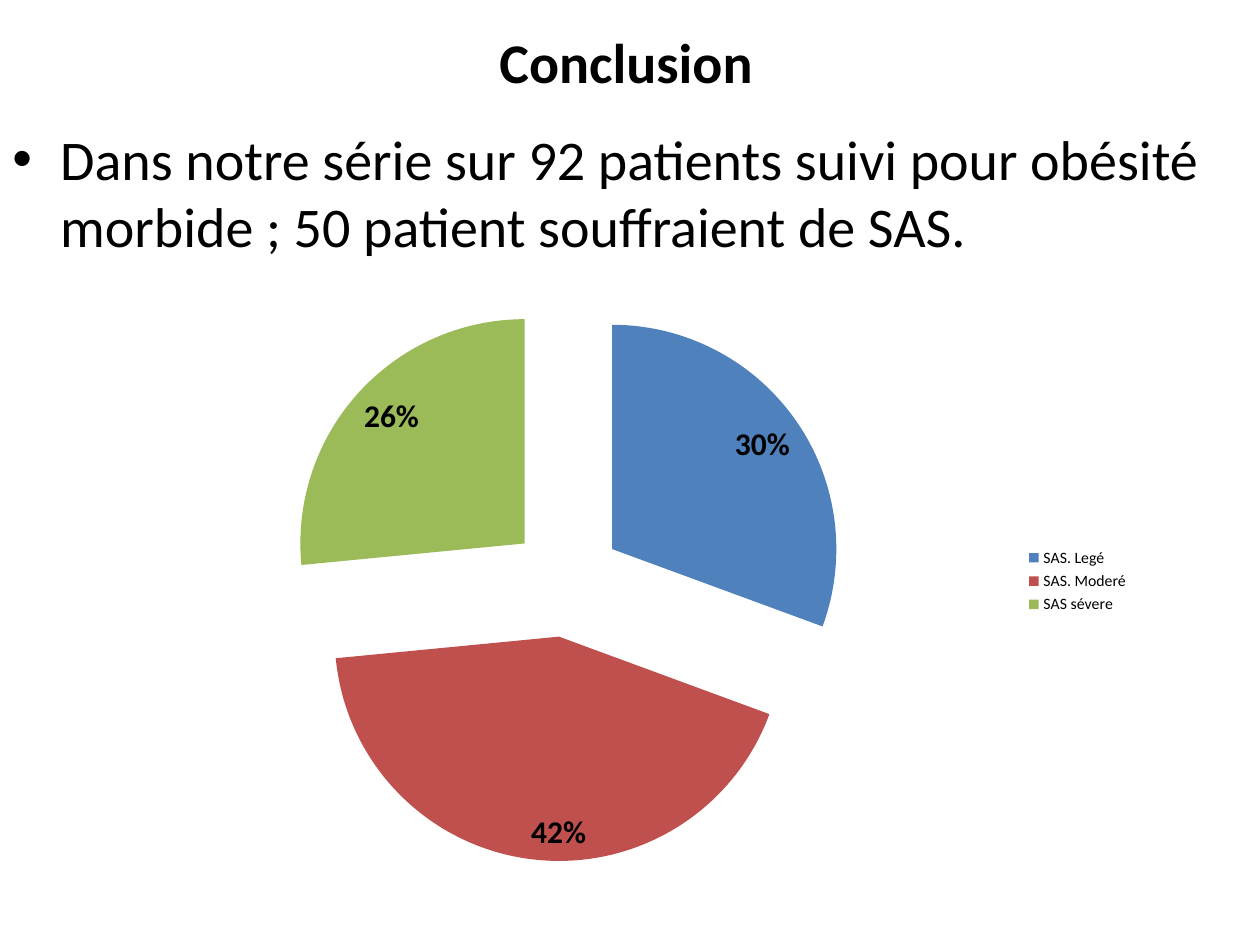
from typing import NamedTuple

from lxml import etree
from pptx import Presentation
from pptx.chart.data import CategoryChartData
from pptx.dml.color import RGBColor
from pptx.enum.chart import XL_CHART_TYPE, XL_LABEL_POSITION, XL_LEGEND_POSITION
from pptx.enum.text import MSO_ANCHOR, PP_ALIGN
from pptx.oxml.ns import qn
from pptx.util import Inches, Pt

PIE = XL_CHART_TYPE.PIE
INSIDE = XL_LABEL_POSITION.INSIDE_END
RIGHT = XL_LEGEND_POSITION.RIGHT
MIDDLE, TOP = MSO_ANCHOR.MIDDLE, MSO_ANCHOR.TOP
CENTER, LEFT = PP_ALIGN.CENTER, PP_ALIGN.LEFT

WIDE, HIGH = Inches(10), Inches(7.5)
FACE = "Calibri"
HEX = {"ink": "000000", "blue": "4F81BD", "red": "C0504D", "green": "9BBB59"}


class Box(NamedTuple):
    left: float
    top: float
    width: float
    height: float

    def place(self) -> list[int]:
        return [round(share * side) for share, side in zip(self, (WIDE, HIGH) * 2)]


class Slice(NamedTuple):
    name: str
    share: float
    hue: str


SLICES = [
    Slice("SAS. Legé", 0.30, "blue"),
    Slice("SAS. Moderé", 0.42, "red"),
    Slice("SAS sévere", 0.26, "green"),
]


def color(key: str) -> RGBColor:
    return RGBColor.from_string(HEX[key])


def style(font, size: float, bold: bool = False) -> None:
    font.name, font.size, font.bold = FACE, Pt(size), bold
    font.color.rgb = color("ink")


def write(shape, text: str, align, anchor, bold: bool = False):
    frame = shape.text_frame
    frame.text = text
    frame.word_wrap = True
    frame.vertical_anchor = anchor
    line = frame.paragraphs[0]
    line.alignment = align
    style(line.runs[0].font, 32, bold)
    return line


def bullet(line) -> None:
    props = line._p.get_or_add_pPr()
    props.set("marL", str(Inches(0.38)))
    props.set("indent", str(Inches(-0.38)))
    etree.SubElement(props, qn("a:buFont"), typeface="Arial")
    etree.SubElement(props, qn("a:buChar"), char="•")


def draw_pie(slide, box: Box, slices: list[Slice]) -> None:
    data = CategoryChartData(number_format="0%")
    data.categories = [part.name for part in slices]
    data.add_series("Series 1", [part.share for part in slices])
    chart = slide.shapes.add_chart(PIE, *box.place(), data).chart
    style(chart.font, 10)
    chart.has_title = False
    chart.has_legend = True
    chart.legend.position = RIGHT
    chart.legend.include_in_layout = False
    style(chart.legend.font, 9)

    plot = chart.plots[0]
    plot.vary_by_categories = True
    series = plot.series[0]
    for spot, part in enumerate(slices):
        fill = series.points[spot].format.fill
        fill.solid()
        fill.fore_color.rgb = color(part.hue)
    burst = etree.Element(qn("c:explosion"), val="25")
    series._element.find(qn("c:dPt")).addprevious(burst)

    plot.has_data_labels = True
    labels = plot.data_labels
    labels.show_value = True
    labels.show_percentage = False
    labels.number_format = "0%"
    labels.number_format_is_linked = False
    labels.position = INSIDE
    style(labels.font, 18, True)


def main() -> None:
    deck = Presentation()
    deck.slide_width, deck.slide_height = WIDE, HIGH
    slide = deck.slides.add_slide(deck.slide_layouts[5])

    title = slide.shapes.title
    title.left, title.top, title.width, title.height = Box(0.047, -0.02, 0.9, 0.17).place()
    write(title, "Conclusion", CENTER, MIDDLE, True)

    body = slide.shapes.add_textbox(*Box(0, 0.125, 1, 0.77).place())
    text = "Dans notre série sur 92 patients suivi pour obésité morbide ; 50 patient souffraient de SAS."
    line = write(body, text, LEFT, TOP)
    line.space_before = Pt(6.4)
    bullet(line)

    draw_pie(slide, Box(0.086, 0.3, 0.82, 0.63), SLICES)
    deck.save("out.pptx")


if __name__ == "__main__":
    main()
